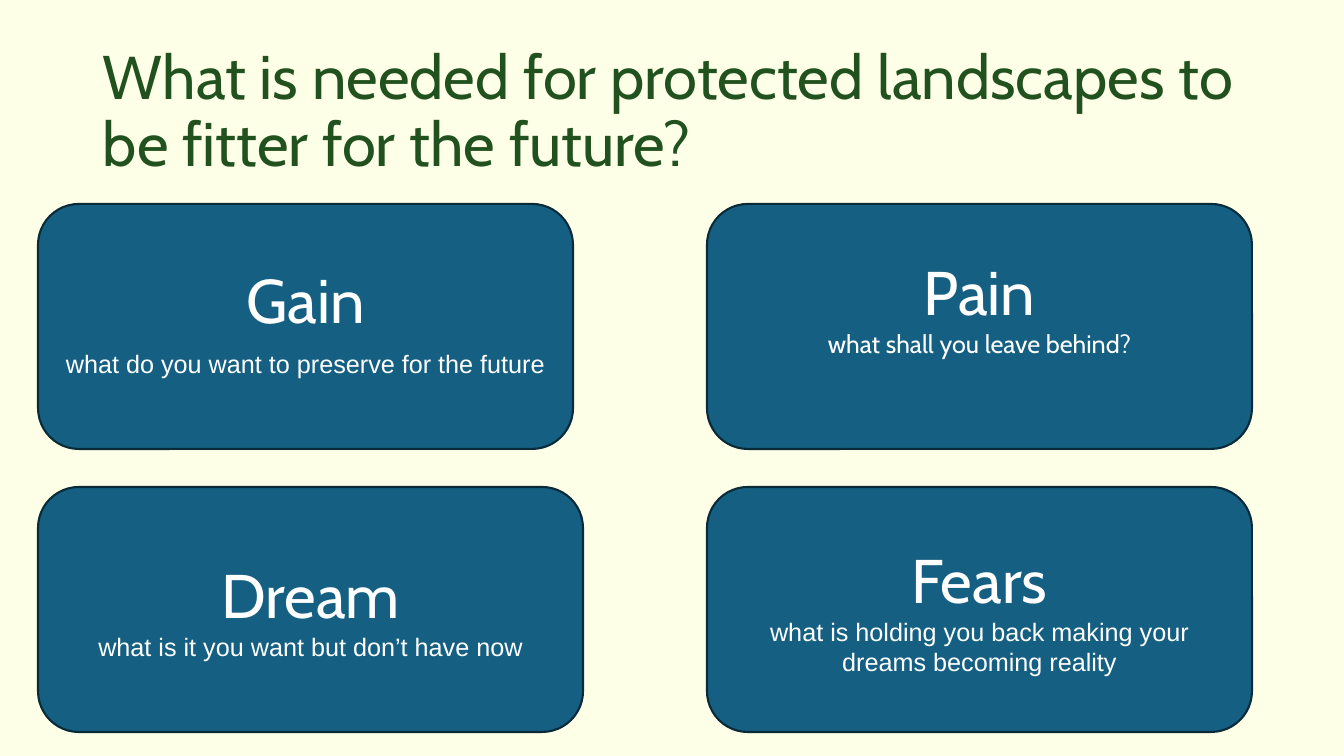
from dataclasses import dataclass

from pptx import Presentation
from pptx.dml.color import RGBColor
from pptx.enum.shapes import MSO_SHAPE
from pptx.enum.text import MSO_ANCHOR, PP_ALIGN
from pptx.slide import Slide
from pptx.util import Emu, Pt

SCALE = 914400 / 100.8


def px(n: int) -> Emu:
    return Emu(round(n * SCALE))


@dataclass(frozen=True)
class Theme:
    page: RGBColor = RGBColor.from_string("FEFFE7")
    title: RGBColor = RGBColor.from_string("21511F")
    card: RGBColor = RGBColor.from_string("156082")
    edge: RGBColor = RGBColor.from_string("092A39")
    text: RGBColor = RGBColor.from_string("FFFFFF")
    head: str = "Cabin"
    body: str = "Arial"
    large: Pt = Pt(44)
    small: Pt = Pt(18)
    line: Pt = Pt(1.5)


THEME = Theme()
LEFT, TOP = 38, 204
STEP_X, STEP_Y = 669, 283
HEIGHT = 245


@dataclass(frozen=True)
class Card:
    col: int
    row: int
    head: str
    note: str
    width: int = 545
    font: str = THEME.body
    gap: int = 0
    lift: int = 0


CARDS = [
    Card(0, 0, "Gain", "what do you want to preserve for the future",
         width=535, gap=9, lift=12),
    Card(0, 1, "Dream", "what is it you want but don’t have now"),
    Card(1, 1, "Fears",
         "what is holding you back making your dreams becoming reality"),
    Card(1, 0, "Pain", "what shall you leave behind?",
         font=THEME.head, lift=40),
]


def apply(target: object, values: dict) -> None:
    for name, value in values.items():
        setattr(target, name, value)


def write(para, text: str, font: str, size: Pt, color: RGBColor,
          form: dict) -> None:
    run = para.add_run()
    run.text = text
    apply(run.font, {"name": font, "size": size})
    run.font.color.rgb = color
    apply(para, form)


def add_title(slide: Slide, text: str) -> None:
    frame = slide.shapes.add_textbox(
        px(93), px(40), px(1159), px(146)).text_frame
    apply(frame, {"word_wrap": True, "vertical_anchor": MSO_ANCHOR.MIDDLE})
    write(frame.paragraphs[0], text, THEME.head, THEME.large, THEME.title,
          {"line_spacing": 0.9})


def add_card(slide: Slide, card: Card) -> None:
    shape = slide.shapes.add_shape(
        MSO_SHAPE.ROUNDED_RECTANGLE,
        px(LEFT + card.col * STEP_X), px(TOP + card.row * STEP_Y),
        px(card.width), px(HEIGHT))
    shape.shadow.inherit = False
    shape.fill.solid()
    shape.fill.fore_color.rgb = THEME.card
    shape.line.color.rgb = THEME.edge
    shape.line.width = THEME.line
    frame = shape.text_frame
    apply(frame, {"word_wrap": True, "vertical_anchor": MSO_ANCHOR.MIDDLE,
                  "margin_bottom": px(5 + card.lift)})
    center = {"alignment": PP_ALIGN.CENTER}
    write(frame.paragraphs[0], card.head, THEME.head, THEME.large,
          THEME.text, center)
    write(frame.add_paragraph(), card.note, card.font, THEME.small,
          THEME.text, {**center, "space_before": Pt(card.gap)})


def main() -> None:
    deck = Presentation()
    apply(deck, {"slide_width": px(1344), "slide_height": px(756)})
    slide = deck.slides.add_slide(deck.slide_layouts[6])
    slide.background.fill.solid()
    slide.background.fill.fore_color.rgb = THEME.page
    add_title(slide, "What is needed for protected landscapes to be "
                     "fitter for the future?")
    for card in CARDS:
        add_card(slide, card)
    deck.save("out.pptx")


if __name__ == "__main__":
    main()
